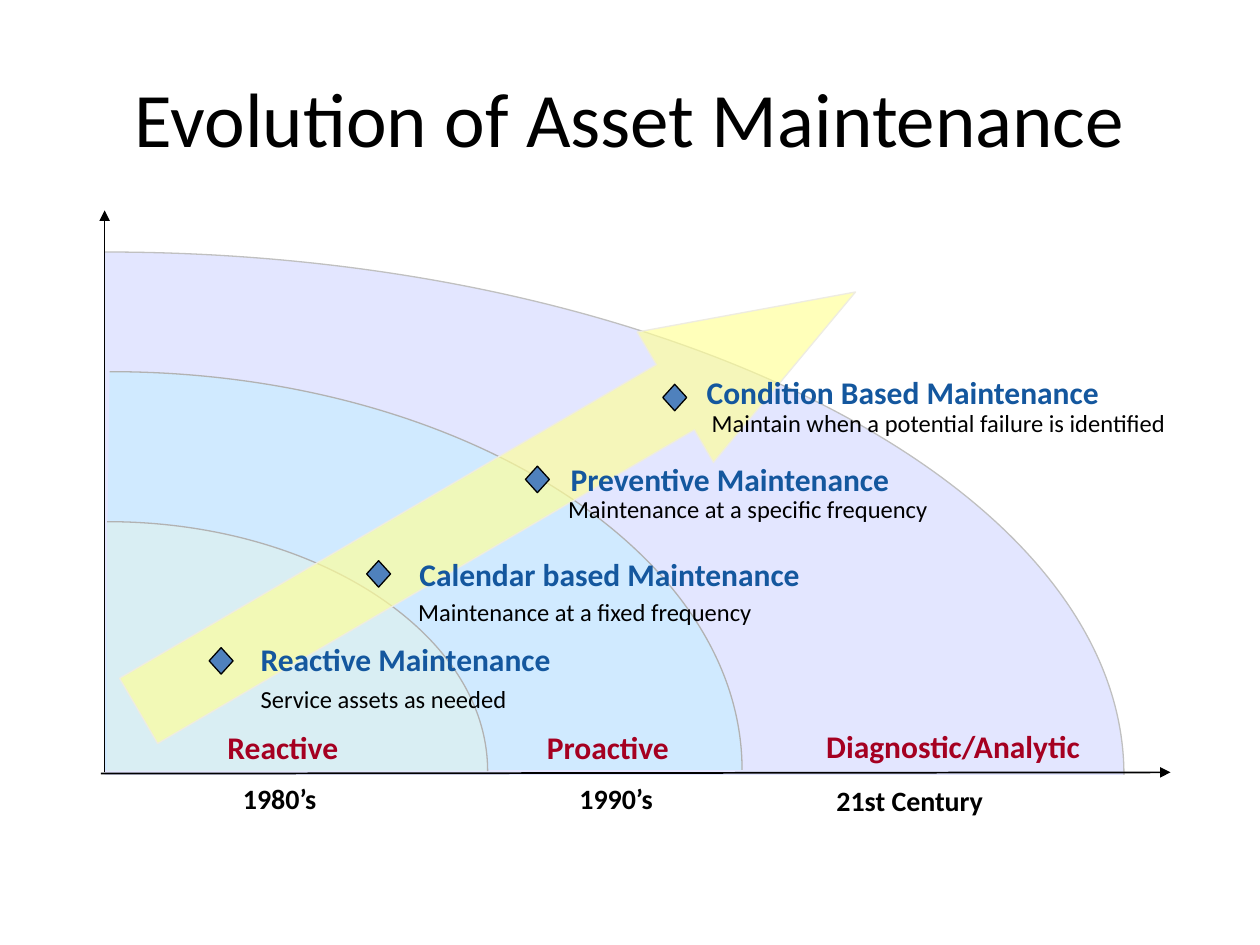
"""Builds the slide on the evolution of asset maintenance."""
import copy

import pptx
import pptx.util
from pptx.dml.color import RGBColor
from pptx.enum.shapes import MSO_CONNECTOR, MSO_SHAPE
from pptx.enum.text import MSO_ANCHOR, PP_ALIGN
from pptx.oxml import parse_xml
from pptx.oxml.ns import nsdecls, qn
from pptx.util import Inches

FONT = "Calibri"
COLORS = {
    "black": "000000", "zone": "A50021", "heading": "14579E", "marker": "4F81BD",
    "arrow": "FFFF99", "arrow_line": "EEECE1", "zone_line": "B2B2B2",
    "outer_line": "C0C0C0", "diagnostic": "DDE0FF", "proactive": "CCECFF",
    "reactive": "DCEFF0",
}
TITLE = "Evolution of Asset Maintenance"
ZONES = [
    ("diagnostic", "outer_line", (0.83, 2, 8.09, 4.15), 0.83),
    ("proactive", "zone_line", (0.83, 2.95, 5.06, 3.16), 0.87),
    ("reactive", "zone_line", (0.85, 4.14, 3.02, 1.98), 0.85),
]
AXES = [((0.8, 6.14), (9.29, 6.13)), ((0.83, 6.13), (0.83, 1.67))]
ZONE_LABELS = [
    ("Reactive", (1.63, 5.73, 1.23, 0.4)),
    ("Proactive", (4.16, 5.73, 1.33, 0.4)),
    ("Diagnostic/Analytic", (6.18, 5.72, 2.77, 0.4)),
]
PERIODS = [
    ("1980’s", (1.83, 6.15, 0.88, 0.37)),
    ("1990’s", (4.5, 6.15, 0.88, 0.37)),
    ("21st Century", (6.54, 6.17, 1.55, 0.37)),
]
STAGES = [
    ("Reactive Maintenance", (1.97, 5.03, 2.81, 0.4),
     "Service assets as needed", (1.97, 5.38, 2.42, 0.33), (1.66, 5.14)),
    ("Calendar based Maintenance", (3.23, 4.36, 3.65, 0.4),
     "Maintenance at a fixed frequency", (3.22, 4.69, 3.68, 0.33), (2.91, 4.45)),
    ("Preventive Maintenance", (4.43, 3.6, 3.05, 0.4),
     "Maintenance at a specific frequency", (4.41, 3.87, 3.68, 0.33), (4.17, 3.7)),
    ("Condition Based Maintenance", (5.51, 2.91, 3.77, 0.4),
     "Maintain when a potential failure is identified", (5.55, 3.19, 4.01, 0.33),
     (5.26, 3.05)),
]
ELLIPSE_HANDLE = 0.55


def rgb(name):
    return RGBColor.from_string(COLORS[name])


def style_shape(shape, fill, line, opacity=100):
    shape.shadow.inherit = False
    shape.fill.solid()
    shape.fill.fore_color.rgb = rgb(fill)
    shape.line.color.rgb = rgb(line)
    shape.line.width = pptx.util.Pt(0.75)
    if opacity < 100:
        color = shape._element.spPr.find(qn("a:solidFill"))[0]
        color.append(parse_xml(f'<a:alpha {nsdecls("a")} val="{opacity * 1000}"/>'))


def add_zone(slide, fill, line, box, arc_start):
    left, top, width, height = box
    right, bottom = left + width, top + height
    points = [
        (arc_start, top),
        (arc_start + ELLIPSE_HANDLE * (right - arc_start), top),
        (right, bottom - ELLIPSE_HANDLE * height),
        (right, bottom),
        (left, bottom),
    ]
    corners = [(Inches(x), Inches(y)) for x, y in points]
    builder = slide.shapes.build_freeform(*corners[0])
    builder.add_line_segments(corners[1:], close=True)
    shape = builder.convert_to_shape()
    style_shape(shape, fill, line, 80)

    area = shape._element.spPr.find(".//" + qn("a:path"))
    curve = parse_xml(f'<a:cubicBezTo {nsdecls("a")}/>')
    for segment in area[1:4]:
        curve.append(segment[0])
        area.remove(segment)
    area.insert(1, curve)
    outline = copy.deepcopy(area)
    for segment in outline[2:]:
        outline.remove(segment)
    outline.set("fill", "none")
    area.set("stroke", "0")
    area.addprevious(outline)


def add_axis(slide, start, end):
    axis = slide.shapes.add_connector(
        MSO_CONNECTOR.STRAIGHT, *map(Inches, start + end))
    axis.line.color.rgb = rgb("black")
    axis.line.width = pptx.util.Pt(1)
    axis.line._get_or_add_ln().append(
        parse_xml(f'<a:tailEnd {nsdecls("a")} type="triangle"/>'))
    axis._element.spPr.append(parse_xml(f'<a:effectLst {nsdecls("a")}/>'))


def format_text(shape, text, size, color, bold=False, align=PP_ALIGN.LEFT):
    shape.text_frame.word_wrap = True
    paragraph = shape.text_frame.paragraphs[0]
    paragraph.text = text
    paragraph.alignment = align
    paragraph.font.name = FONT
    paragraph.font.size = pptx.util.Pt(size)
    paragraph.font.bold = bold
    paragraph.font.color.rgb = rgb(color)


def add_text(slide, box, *text_format):
    format_text(slide.shapes.add_textbox(*map(Inches, box)), *text_format)


def main():
    presentation = pptx.Presentation()
    presentation.slide_width, presentation.slide_height = Inches(10), Inches(7.5)
    slide = presentation.slides.add_slide(presentation.slide_layouts[5])
    title = slide.shapes.title
    title.left, title.top, title.width, title.height = map(Inches, (0.5, 0.3, 9, 1.25))
    title.text_frame.vertical_anchor = MSO_ANCHOR.MIDDLE
    format_text(title, TITLE, 44, "black", False, PP_ALIGN.CENTER)

    for zone in ZONES:
        add_zone(slide, *zone)
    for start, end in AXES:
        add_axis(slide, start, end)
    for text, box in ZONE_LABELS:
        add_text(slide, box, text, 18, "zone", True, PP_ALIGN.CENTER)

    arrow = slide.shapes.add_shape(
        MSO_SHAPE.RIGHT_ARROW, *map(Inches, (0.65, 3.38, 6.59, 1.2)))
    arrow.rotation = 329.7
    arrow.adjustments[0], arrow.adjustments[1] = 0.5, 1.38
    style_shape(arrow, "arrow", "arrow_line", 67)

    for heading, heading_box, detail, detail_box, position in STAGES:
        add_text(slide, heading_box, heading, 18, "heading", True)
        add_text(slide, detail_box, detail, 14, "black")
        marker = slide.shapes.add_shape(
            MSO_SHAPE.FLOWCHART_DECISION, *map(Inches, position + (0.19, 0.21)))
        style_shape(marker, "marker", "black")
    for text, box in PERIODS:
        add_text(slide, box, text, 16, "black", True)
    presentation.save("out.pptx")


if __name__ == "__main__":
    main()
